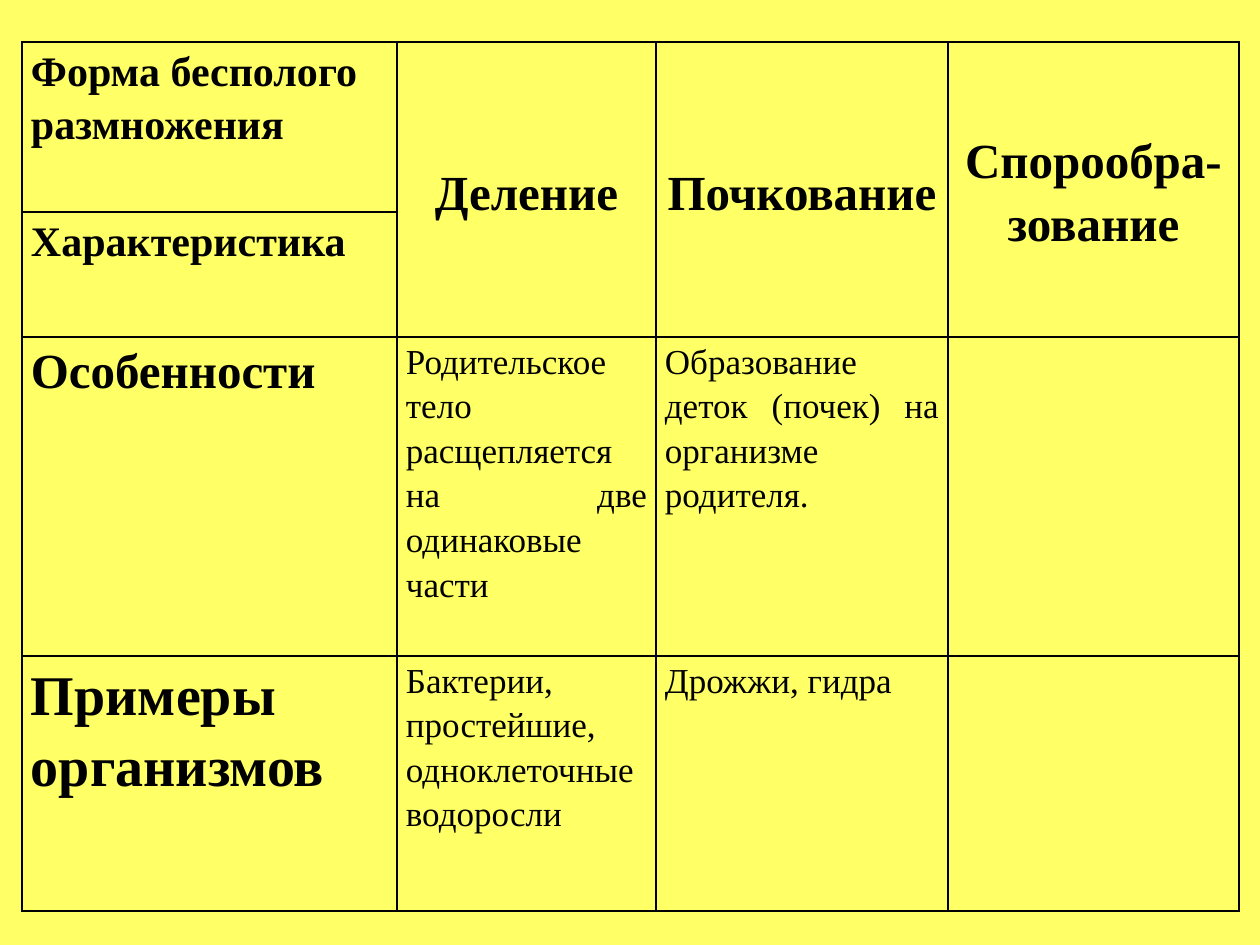
import pptx
import pptx.dml.color
import pptx.enum.text
import pptx.oxml
import pptx.oxml.ns
import pptx.util

ALIGN = pptx.enum.text.PP_ALIGN
ANCHOR = pptx.enum.text.MSO_ANCHOR


def color(value):
    return pptx.dml.color.RGBColor.from_string(value)


def px(value):
    return pptx.util.Emu(round(value * 914400 / 126))


class SlideBuilder:
    font_name = "Times New Roman"
    ink = "000000"
    background = "FFFF66"
    line_spacing = 1.15
    border_width = pptx.util.Pt(1)

    def __init__(self, presentation):
        self.slide = presentation.slides.add_slide(presentation.slide_layouts[6])
        fill = self.slide.background.fill
        fill.solid()
        fill.fore_color.rgb = color(self.background)

    def table(self, left, top, column_widths, row_heights):
        frame = self.slide.shapes.add_table(
            len(row_heights), len(column_widths), px(left), px(top),
            px(sum(column_widths)), px(sum(row_heights)))
        table = frame.table
        table.first_row = False
        table.horz_banding = False
        for column, width in zip(table.columns, column_widths):
            column.width = px(width)
        for row, height in zip(table.rows, row_heights):
            row.height = px(height)
        for cell in table.iter_cells():
            cell.margin_left = cell.margin_right = px(9)
            cell.margin_top = cell.margin_bottom = 0
            cell.fill.background()
            self.borders(cell)
        return table

    def borders(self, cell):
        properties = cell._tc.get_or_add_tcPr()
        for index, side in enumerate(("lnL", "lnR", "lnT", "lnB")):
            properties.insert(index, pptx.oxml.parse_xml(
                f'<a:{side} {pptx.oxml.ns.nsdecls("a")} w="{self.border_width}">'
                f'<a:solidFill><a:srgbClr val="{self.ink}"/></a:solidFill>'
                f'</a:{side}>'))

    def cell_text(self, cell, text, size, bold, align, anchor=ANCHOR.TOP):
        cell.text_frame.text = text
        cell.vertical_anchor = anchor
        paragraph = cell.text_frame.paragraphs[0]
        paragraph.alignment = align
        paragraph.line_spacing = self.line_spacing
        for run in paragraph.runs:
            run.font.name = self.font_name
            run.font.size = pptx.util.Pt(size)
            run.font.bold = bold
            run.font.color.rgb = color(self.ink)


def main():
    presentation = pptx.Presentation()
    presentation.slide_width = px(1260)
    presentation.slide_height = px(945)
    builder = SlideBuilder(presentation)
    table = builder.table(22, 42, [375, 259, 292, 291], [170, 125, 319, 255])

    forms = ["Деление", "Почкование", "Спорообра-зование"]
    for column, form in enumerate(forms, start=1):
        table.cell(0, column).merge(table.cell(1, column))
        builder.cell_text(table.cell(0, column), form, 28, True,
                          ALIGN.CENTER, ANCHOR.MIDDLE)

    row_titles = [
        ("Форма бесполого размножения", 24, ALIGN.LEFT),
        ("Характеристика", 24, ALIGN.JUSTIFY),
        ("Особенности", 28, ALIGN.JUSTIFY),
        ("Примеры организмов", 32, ALIGN.JUSTIFY),
    ]
    for row, (title, size, align) in enumerate(row_titles):
        builder.cell_text(table.cell(row, 0), title, size, True, align)

    descriptions = [
        ["Родительское тело расщепляется на две одинаковые части",
         "Образование деток (почек) на организме родителя."],
        ["Бактерии, простейшие, одноклеточные водоросли", "Дрожжи, гидра"],
    ]
    for row, texts in enumerate(descriptions, start=2):
        for column, text in enumerate(texts, start=1):
            builder.cell_text(table.cell(row, column), text, 20, False,
                              ALIGN.JUSTIFY)

    presentation.save("out.pptx")


if __name__ == "__main__":
    main()
